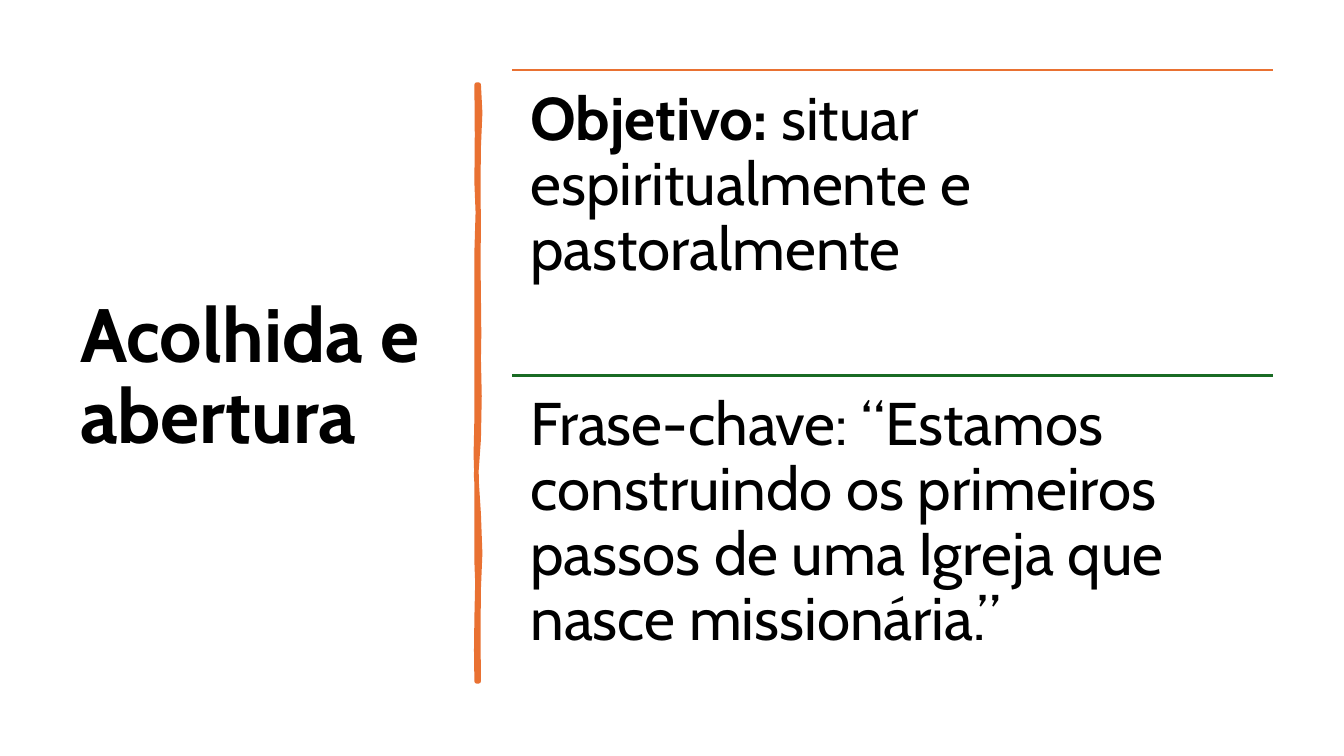
from dataclasses import dataclass

from lxml.etree import SubElement
from pptx import Presentation
from pptx.dml.color import RGBColor
from pptx.enum.shapes import MSO_CONNECTOR
from pptx.enum.text import MSO_ANCHOR
from pptx.oxml.ns import qn
from pptx.util import Inches, Pt


@dataclass(frozen=True)
class Theme:
    font: str = "Cabin"
    text: str = "000000"
    orange: str = "E97132"
    green: str = "196B24"
    title_size: float = 54
    body_size: float = 43
    rule_width: float = 1.5
    brush_width: float = 3.25
    line_spacing: float = 0.9


class SlideBuilder:
    """Places elements on a grid of 100 columns by 100 rows."""

    def __init__(self, deck, theme):
        self.deck = deck
        self.theme = theme
        self.page = deck.slides.add_slide(deck.slide_layouts[6])

    def x(self, columns):
        return round(self.deck.slide_width * columns / 100)

    def y(self, rows):
        return round(self.deck.slide_height * rows / 100)

    def text(self, left, top, width, height, runs, size, insets, anchor):
        box = self.page.shapes.add_textbox(
            self.x(left), self.y(top), self.x(width), self.y(height))
        frame = box.text_frame
        frame.word_wrap = True
        frame.vertical_anchor = anchor
        frame.margin_left = frame.margin_right = Inches(insets[0])
        frame.margin_top = frame.margin_bottom = Inches(insets[1])
        para = frame.paragraphs[0]
        para.line_spacing = self.theme.line_spacing
        for wording, bold in runs:
            span = para.add_run()
            span.text = wording
            span.font.name = self.theme.font
            span.font.size = Pt(size)
            span.font.bold = bold
            span.font.color.rgb = RGBColor.from_string(self.theme.text)

    def rule(self, left, top, width, color):
        line = self.page.shapes.add_connector(
            MSO_CONNECTOR.STRAIGHT, self.x(left), self.y(top),
            self.x(left + width), self.y(top))
        line.line.color.rgb = RGBColor.from_string(color)
        line.line.width = Pt(self.theme.rule_width)
        SubElement(line._element.spPr, qn("a:effectLst"))

    def brush(self, outline, color):
        """Draws a closed stroke through the outline's grid points."""
        points = [(self.x(column), self.y(row)) for column, row in outline]
        builder = self.page.shapes.build_freeform(*points[0], scale=1.0)
        builder.add_line_segments(points[1:], close=True)
        stroke = builder.convert_to_shape()
        stroke.shadow.inherit = False
        stroke.fill.solid()
        stroke.fill.fore_color.rgb = RGBColor.from_string(color)
        stroke.line.color.rgb = RGBColor.from_string(color)
        stroke.line.width = Pt(self.theme.brush_width)


# Brush outline: down the right edge, then up the left edge
BRUSH = [
    (35.62, 11.2), (35.73, 14.9), (35.62, 19.47), (35.59, 24.6),
    (35.62, 30.13), (35.59, 34.6), (35.62, 39.2), (35.65, 44.2),
    (35.62, 47.47), (35.68, 52.4), (35.62, 58.13), (35.43, 62.8),
    (35.62, 68), (35.73, 73.2), (35.62, 77.87), (35.59, 83.7),
    (35.62, 90.13), (35.47, 90.13),
    (35.44, 86), (35.47, 81.73), (35.53, 77.1), (35.47, 74.27),
    (35.47, 69.2), (35.47, 63.6), (35.41, 60.1), (35.47, 55.33),
    (35.47, 50.5), (35.47, 44.67), (35.47, 38.7), (35.47, 33.33),
    (35.56, 28.1), (35.47, 24.13), (35.5, 17.8), (35.47, 11.2),
]


def main():
    deck = Presentation()
    deck.slide_width, deck.slide_height = Inches(13.33), Inches(7.5)
    theme = Theme()
    slide = SlideBuilder(deck, theme)

    # Title and brush divider
    slide.text(5.22, 9.33, 28.05, 81.47, [("Acolhida e abertura", True)],
               theme.title_size, (0.1, 0.05), MSO_ANCHOR.MIDDLE)
    slide.brush(BRUSH, theme.orange)

    # Ruled statements in equal rows
    left, top, width, height = 38.12, 9.3, 56.63, 40.37
    statements = [
        (theme.orange, [("Objetivo:", True),
                        (" situar espiritualmente e pastoralmente", False)]),
        (theme.green, [("Frase-chave: “Estamos construindo os primeiros passos "
                        "de uma Igreja que nasce missionária.”", False)]),
    ]
    for index, (color, runs) in enumerate(statements):
        row = top + index * height
        slide.rule(left, row, width, color)
        slide.text(left, row, width, height, runs,
                   theme.body_size, (0.18, 0.18), MSO_ANCHOR.TOP)

    deck.save("out.pptx")


if __name__ == "__main__":
    main()
